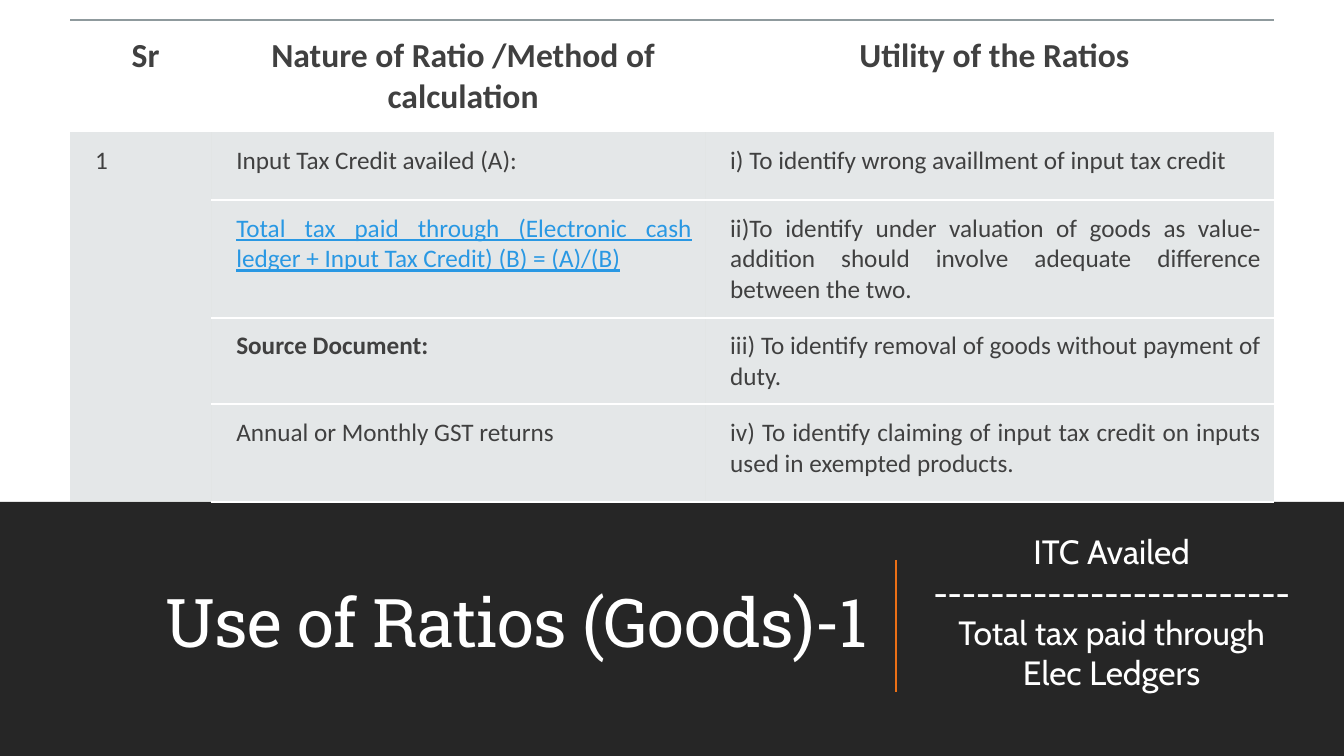
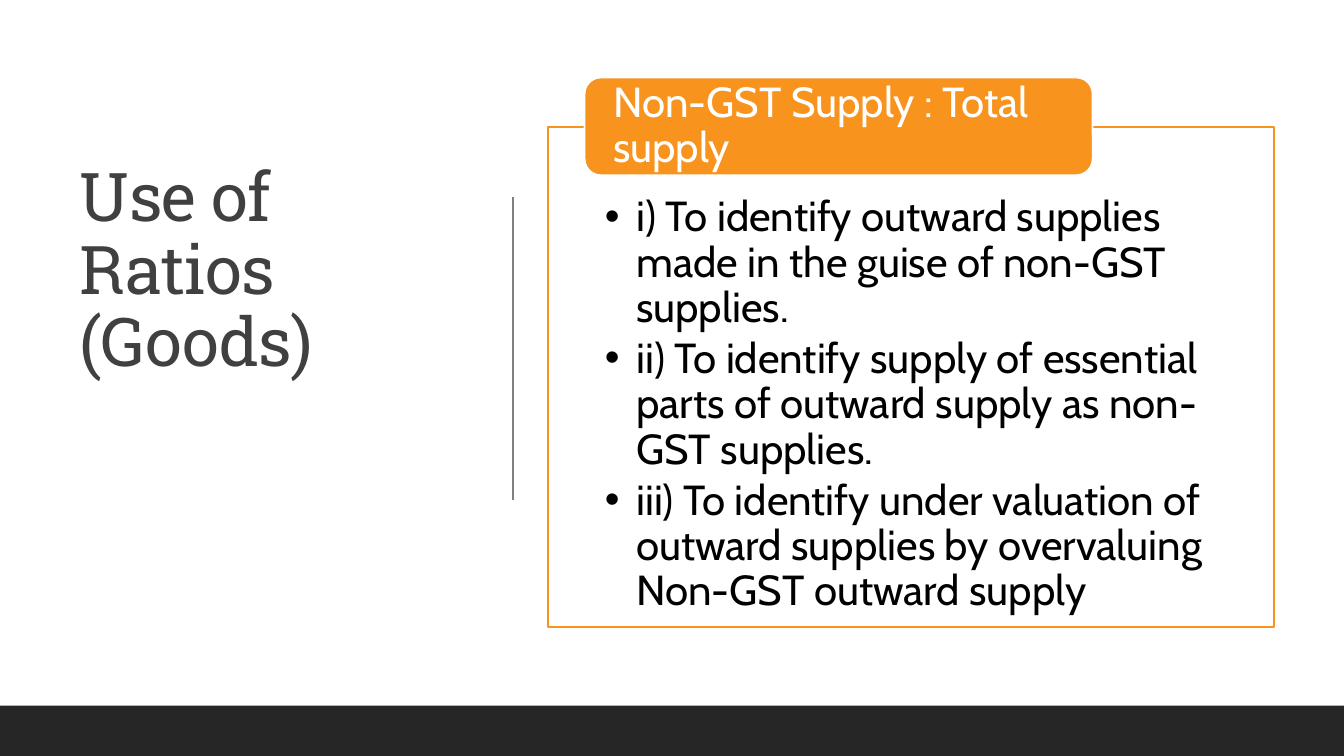
"""Build two slides on the use of ratios for goods under GST."""
from dataclasses import dataclass, replace

from lxml.etree import SubElement
from pptx import Presentation
from pptx.dml.color import RGBColor
from pptx.enum.shapes import MSO_CONNECTOR as Connector, MSO_SHAPE as Shape
from pptx.enum.text import MSO_ANCHOR as Anchor, PP_ALIGN as Align
from pptx.oxml.ns import qn
from pptx.util import Pt


@dataclass(frozen=True)
class TextStyle:
    font: str
    size: int
    color: str
    bold: bool = False
    underline: bool = False
    tracking: float = 0


@dataclass(frozen=True)
class Theme:
    white: str = "FFFFFF"
    dark: str = "262626"
    ink: str = "404040"
    orange: str = "F8931D"
    rust: str = "EC7016"
    gray: str = "808080"
    table_rule: str = "8F9A9D"
    table_fill: str = "B4BCBE"
    title: TextStyle = TextStyle("Roboto Slab", 48, "404040", tracking=-0.5)
    header: TextStyle = TextStyle("Calibri", 24, "404040", bold=True)
    cell: TextStyle = TextStyle("Calibri", 18, "404040")
    link: TextStyle = TextStyle("Calibri", 18, "2998E3", underline=True)
    formula: TextStyle = TextStyle("Cabin", 24, "FFFFFF")
    label: TextStyle = TextStyle("Cabin", 30, "FFFFFF")
    points: TextStyle = TextStyle("Cabin", 30, "000000")


THEME = Theme()
WIDTH, HEIGHT = 960, 540
PLAIN_TABLE = "{2D5ABB26-0587-4C30-8999-92F81FD0307C}"


def set_alpha(parent, percent):
    for color in parent.iter(qn("a:srgbClr")):
        SubElement(color, qn("a:alpha"), val=str(percent * 1000))


class SlideBuilder:
    def __init__(self, theme):
        self.theme = theme
        self.deck = Presentation()
        self.deck.slide_width, self.deck.slide_height = Pt(WIDTH), Pt(HEIGHT)
        self.page = None

    def new_page(self):
        self.page = self.deck.slides.add_slide(self.deck.slide_layouts[6])

    def set_text(self, frame, lines, style, align=Align.LEFT, spacing=None,
                 after=0, bullet_indent=0):
        frame.word_wrap = True
        for index, line in enumerate(lines):
            para = frame.add_paragraph() if index else frame.paragraphs[0]
            para.add_run().text = line
            para.alignment = align
            para.line_spacing = spacing
            para.space_after = Pt(after)
            props = para._p.get_or_add_pPr()
            if bullet_indent:
                props.set("marL", str(Pt(bullet_indent)))
                props.set("indent", str(-Pt(bullet_indent)))
                SubElement(props, qn("a:buFont"), typeface="Arial")
                SubElement(props, qn("a:buChar"), char="•")
            font = para.font
            font.name, font.size = style.font, Pt(style.size)
            font.bold, font.underline = style.bold, style.underline
            font.color.rgb = RGBColor.from_string(style.color)
            if style.tracking:
                props.find(qn("a:defRPr")).set("spc", str(int(style.tracking * 100)))

    def text(self, left, top, width, height, lines, style,
             anchor=Anchor.TOP, **layout):
        box = self.page.shapes.add_textbox(Pt(left), Pt(top), Pt(width), Pt(height))
        box.text_frame.vertical_anchor = anchor
        self.set_text(box.text_frame, lines, style, **layout)

    def title(self, left, top, width, height, words, color, align=Align.LEFT):
        self.text(left, top, width, height, [words],
                  replace(self.theme.title, color=color),
                  anchor=Anchor.MIDDLE, align=align, spacing=0.9)

    def panel(self, left, top, width, height, fill, line=None, kind=Shape.RECTANGLE):
        shape = self.page.shapes.add_shape(
            kind, Pt(left), Pt(top), Pt(width), Pt(height))
        shape.shadow.inherit = False
        shape.fill.solid()
        shape.fill.fore_color.rgb = RGBColor.from_string(fill)
        if line:
            shape.line.color.rgb = RGBColor.from_string(line)
            shape.line.width = Pt(1.25)
        else:
            shape.line.fill.background()
        return shape

    def text_panel(self, place, lines, style, insets, anchor, paint, **layout):
        frame = self.panel(*place, **paint).text_frame
        frame.vertical_anchor = anchor
        (frame.margin_left, frame.margin_top,
         frame.margin_right, frame.margin_bottom) = map(Pt, insets)
        self.set_text(frame, lines, style, spacing=0.9, **layout)

    def band(self, top):
        self.panel(0, top, WIDTH, HEIGHT - top, self.theme.dark)

    def divider(self, x, top, bottom, color, width):
        rule = self.page.shapes.add_connector(
            Connector.STRAIGHT, Pt(x), Pt(top), Pt(x), Pt(bottom))
        rule.line.color.rgb = RGBColor.from_string(color)
        rule.line.width = Pt(width)
        SubElement(rule._element.spPr, qn("a:effectLst"))

    def border(self, cell, edge, color, alpha=100):
        line = SubElement(cell._tc.get_or_add_tcPr(), qn("a:" + edge),
                          w=str(Pt(1.5)))
        fill = SubElement(line, qn("a:solidFill"))
        SubElement(fill, qn("a:srgbClr"), val=color)
        set_alpha(line, alpha)

    def table(self, left, top, widths, heights, headings, rows):
        table = self.page.shapes.add_table(
            len(heights), len(widths), Pt(left), Pt(top),
            Pt(sum(widths)), Pt(sum(heights))).table
        table.first_row = table.horz_banding = False
        table._tbl.tblPr.find(qn("a:tableStyleId")).text = PLAIN_TABLE
        for column, width in zip(table.columns, widths):
            column.width = Pt(width)
        for row, height in zip(table.rows, heights):
            row.height = Pt(height)
        for index, heading in enumerate(headings):
            cell = table.cell(0, index)
            self.border(cell, "lnT", self.theme.table_rule, 60)
            cell.fill.background()
            self.fill_cell(cell, heading, self.theme.header, Align.CENTER, 10.8)
        for row_index, row in enumerate(rows, 1):
            for index, (words, style) in enumerate(row, len(widths) - len(row)):
                cell = table.cell(row_index, index)
                if index:
                    self.border(cell, "lnB", self.theme.white)
                cell.fill.solid()
                cell.fill.fore_color.rgb = RGBColor.from_string(self.theme.table_fill)
                set_alpha(cell._tc.tcPr.find(qn("a:solidFill")), 35)
                align = Align.JUSTIFY if index else Align.LEFT
                self.fill_cell(cell, words, style, align, 9.4)
        table.cell(1, 0).merge(table.cell(len(rows), 0))

    def fill_cell(self, cell, words, style, align, margin):
        cell.margin_left = Pt(18)
        cell.margin_top = cell.margin_right = cell.margin_bottom = Pt(margin)
        self.set_text(cell.text_frame, [words], style, align)


def ratio_table_page(builder):
    theme = builder.theme
    plain, strong = theme.cell, replace(theme.cell, bold=True)
    builder.new_page()
    builder.band(358.5)
    builder.title(50, 386, 577, 122, "Use of Ratios (Goods)-1", theme.white, Align.RIGHT)
    builder.divider(640, 400, 494, theme.rust, 1.5)
    builder.table(
        50, 14.4, (100.8, 352.8, 406.4), (80, 48.5, 84, 62, 69.5),
        ("Sr", "Nature of Ratio /Method of calculation", "Utility of the Ratios"),
        (
            (("1", plain),
             ("Input Tax Credit availed (A):", plain),
             ("i) To identify wrong availlment of input tax credit", plain)),
            (("Total tax paid through (Electronic cash ledger + Input Tax Credit) "
              "(B) = (A)/(B)", theme.link),
             ("ii)To identify under valuation of goods as value-addition should "
              "involve adequate difference between the two.", plain)),
            (("Source Document:", strong),
             ("iii) To identify removal of goods without payment of duty.", plain)),
            (("Annual or Monthly GST returns", plain),
             ("iv) To identify claiming of input tax credit on inputs used in "
              "exempted products.", plain)),
        ))
    builder.text(656, 376, 276, 124,
                 ("ITC Availed", "-" * 25, "Total tax paid through Elec Ledgers"),
                 theme.formula, align=Align.CENTER)


def supply_page(builder):
    theme = builder.theme
    builder.new_page()
    builder.title(50, 45, 190, 299, "Use of Ratios (Goods)", theme.ink)
    builder.divider(366.5, 141, 357, theme.gray, 1)
    builder.band(504)
    builder.text_panel(
        (391.7, 90.7, 518.4, 357.1),
        ("i) To identify outward supplies made in the guise of non-GST supplies.",
         "ii) To identify supply of essential parts of outward supply as "
         "non-GST supplies.",
         "iii) To identify under valuation of outward supplies by overvaluing "
         "Non-GST outward supply"),
        theme.points, (40.3, 49, 40.3, 16.6), Anchor.TOP,
        {"fill": theme.white, "line": theme.orange}, after=4, bullet_indent=22.5)
    builder.text_panel(
        (417.6, 55.4, 362.9, 69.8), ["Non-GST Supply : Total supply"],
        theme.label, (17, 0, 17, 0), Anchor.MIDDLE,
        {"fill": theme.orange, "line": theme.white, "kind": Shape.ROUNDED_RECTANGLE})


def main():
    builder = SlideBuilder(THEME)
    ratio_table_page(builder)
    supply_page(builder)
    builder.deck.save("out.pptx")


if __name__ == "__main__":
    main()
